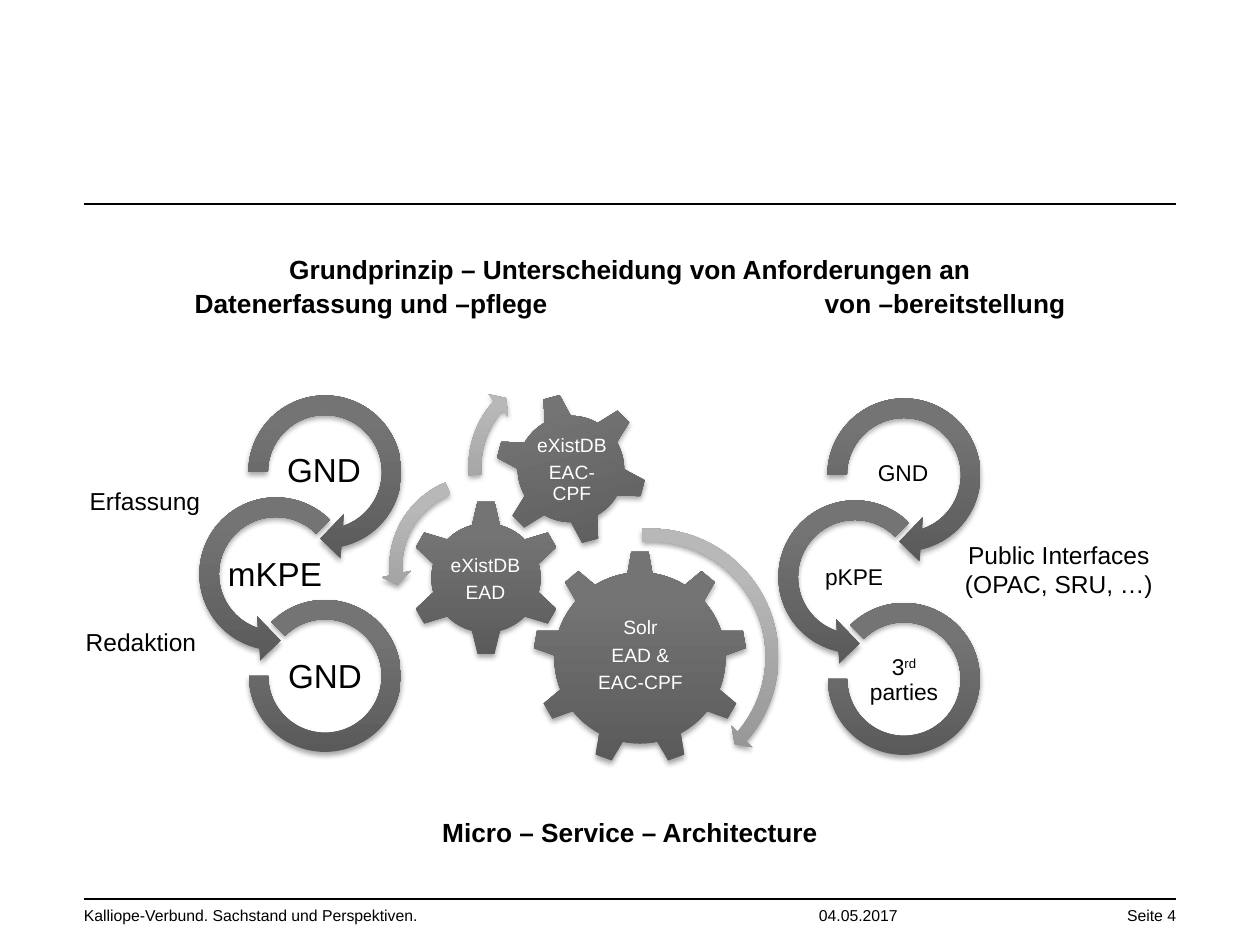
from copy import deepcopy

from lxml import etree
from pptx import Presentation
from pptx.dml.color import RGBColor
from pptx.enum.shapes import MSO_CONNECTOR, MSO_SHAPE
from pptx.enum.text import MSO_ANCHOR, MSO_AUTO_SIZE, PP_ALIGN
from pptx.oxml.ns import qn
from pptx.util import Emu, Pt

PX_PER_INCH = 126
FONT = "Arial"
BLACK = RGBColor(0x00, 0x00, 0x00)
WHITE = RGBColor(0xFF, 0xFF, 0xFF)
DARK_STOPS = [
    (0, RGBColor(0x5A, 0x5A, 0x5A)),
    (0.8, RGBColor(0x74, 0x74, 0x74)),
    (1, RGBColor(0x75, 0x75, 0x75)),
]
LIGHT_STOPS = [
    (0, RGBColor(0x8E, 0x8E, 0x8E)),
    (0.8, RGBColor(0xB8, 0xB8, 0xB8)),
    (1, RGBColor(0xB9, 0xB9, 0xB9)),
]

GEAR_6 = MSO_SHAPE.GEAR_6
GEAR_9 = MSO_SHAPE.GEAR_9
ARROW = MSO_SHAPE.CIRCULAR_ARROW
LEFT_ARROW = MSO_SHAPE.LEFT_CIRCULAR_ARROW
BLOCK_ARC = MSO_SHAPE.BLOCK_ARC
STRAIGHT = MSO_CONNECTOR.STRAIGHT
LEFT, CENTER, RIGHT = PP_ALIGN.LEFT, PP_ALIGN.CENTER, PP_ALIGN.RIGHT
TOP, MIDDLE = MSO_ANCHOR.TOP, MSO_ANCHOR.MIDDLE
GROW = MSO_AUTO_SIZE.SHAPE_TO_FIT_TEXT

SIDE_INSETS = (6, 6, 6, 6)
FOOTER_INSETS = (0, 6, 0, 6)
HEADING_INSETS = (0, 0, 0, 6)
GEAR_INSETS = (2, 2, 2, 2)
CHAIN_INSETS = (1, 1, 1, 1)
HEADING_TABS = [PX_PER_INCH * inch for inch in (3, 4, 5)]


def px(length):
    return Emu(round(length * 914400 / PX_PER_INCH))


def add_rule(slide, y):
    rule = slide.shapes.add_connector(STRAIGHT, px(84), px(y), px(1176), px(y))
    rule.line.color.rgb = BLACK
    rule.line.width = Pt(1)
    etree.SubElement(rule._element.spPr, qn("a:effectLst"))


def add_text(shapes, box, lines, size, insets, align=CENTER, anchor=MIDDLE,
             color=BLACK, bold=False, wrap=True):
    textbox = shapes.add_textbox(*map(px, box))
    frame = textbox.text_frame
    frame.word_wrap = wrap
    frame.vertical_anchor = anchor
    (frame.margin_left, frame.margin_top,
     frame.margin_right, frame.margin_bottom) = map(px, insets)
    frame.text = "\n".join(lines)
    for paragraph, line in zip(frame.paragraphs, lines):
        paragraph.text = ""
        paragraph.alignment = align
        for index, piece in enumerate(line.split("^")):
            run = paragraph.add_run()
            run.text = piece
            run.font.name = FONT
            run.font.size = Pt(size)
            run.font.bold = bold
            run.font.color.rgb = color
            if index % 2:
                run._r.get_or_add_rPr().set("baseline", "30000")
    return frame


def add_heading(slide, box, lines):
    frame = add_text(slide.shapes, box, lines, 15, HEADING_INSETS, bold=True)
    for paragraph in frame.paragraphs[1:]:
        paragraph.space_before = Pt(1.5)
        tabs = etree.SubElement(paragraph._p.get_or_add_pPr(), qn("a:tabLst"))
        for position in HEADING_TABS:
            etree.SubElement(tabs, qn("a:tab"), pos=str(px(position)), algn="l")


def add_diagram_label(shapes, box, lines, size, insets, color):
    frame = add_text(shapes, box, lines, size, insets, color=color)
    for paragraph in frame.paragraphs:
        paragraph.line_spacing = 0.9
        paragraph.space_after = Pt(round(size * 0.35, 1))


def add_side_label(slide, box, lines):
    frame = add_text(slide.shapes, box, lines, 14, SIDE_INSETS, anchor=TOP, wrap=False)
    frame.auto_size = GROW


def add_soft_shadow(shape):
    shape.shadow.inherit = False
    effects = shape._element.spPr.find(qn("a:effectLst"))
    shadow = etree.SubElement(effects, qn("a:outerShdw"), blurRad=str(Pt(3.1)),
                              dist=str(Pt(1.8)), dir="5400000", rotWithShape="0")
    tone = etree.SubElement(shadow, qn("a:srgbClr"), val="000000")
    etree.SubElement(tone, qn("a:alpha"), val="35000")


def add_part(shapes, kind, left, top, size, stops, adjustments=(), rotation=0):
    part = shapes.add_shape(kind, px(left), px(top), px(size), px(size))
    part.rotation = rotation
    for index, value in enumerate(adjustments):
        part.adjustments[index] = value
    part.fill.gradient()
    part.fill.gradient_angle = 90
    stop_list = part._element.spPr.find(qn("a:gradFill")).find(qn("a:gsLst"))
    stop_list.append(deepcopy(stop_list[-1]))
    for stop, (position, color) in zip(part.fill.gradient_stops, stops):
        stop.position = position
        stop.color.rgb = color
    part.line.fill.background()
    add_soft_shadow(part)


def add_gears(slide):
    shapes = slide.shapes.add_group_shape().shapes
    gears = [
        (GEAR_9, 533, 551, 214, 0, (576, 601, 129, 110), ["Solr", "EAD &", "EAC-CPF"]),
        (GEAR_6, 408, 500, 156, 0, (447, 541, 77, 77), ["eXistDB", "EAD"]),
        (GEAR_6, 495, 393, 152, 345, (529, 427, 86, 86), ["eXistDB", "EAC-CPF"]),
    ]
    for kind, left, top, size, rotation, box, lines in gears:
        add_part(shapes, kind, left, top, size, DARK_STOPS, rotation=rotation)
        add_diagram_label(shapes, box, lines, 11, GEAR_INSETS, WHITE)

    turning_arrows = [
        (ARROW, 514, 520, 273, (0.047, 2.99, 24.71, 159.622, 0.055)),
        (LEFT_ARROW, 381, 467, 199, (0.065, 4.3, 104.891, 148.378, 0.075)),
        (ARROW, 460, 360, 214, (0.06, 3.941, 133.138, 105.082, 0.07)),
    ]
    for kind, left, top, size, adjustments in turning_arrows:
        add_part(shapes, kind, left, top, size, LIGHT_STOPS, adjustments)


def add_chain(slide, left, top, labels, size):
    shapes = slide.shapes.add_group_shape().shapes
    links = [
        (ARROW, 0, 0, 178, (0.11, 11.423, 45, 108, 0.125), 39, 64),
        (LEFT_ARROW, -49, 102, 178, (0.11, 11.423, 63, 189, 0.125), -10, 168),
        (BLOCK_ARC, 13, 217, 152, (135, 108, 0.127), 40, 270),
    ]
    for label, (kind, dx, dy, extent, adjustments, label_dx, label_dy) in zip(labels, links):
        add_part(shapes, kind, left + dx, top + dy, extent, DARK_STOPS, adjustments)
        add_diagram_label(shapes, (left + label_dx, top + label_dy, 98, 49),
                          [label], size, CHAIN_INSETS, BLACK)


def add_footer(slide):
    entries = [
        (819, 179, "04.05.2017", LEFT),
        (84, 367, "Kalliope-Verbund. Sachstand und Perspektiven.", LEFT),
        (1056, 120, "Seite 4", RIGHT),
    ]
    for left, width, entry, align in entries:
        add_text(slide.shapes, (left, 900, width, 30), [entry], 9,
                 FOOTER_INSETS, align=align, anchor=TOP)


def main():
    presentation = Presentation()
    presentation.slide_width = px(1260)
    presentation.slide_height = px(945)
    slide = presentation.slides.add_slide(presentation.slide_layouts[6])

    add_rule(slide, 899)
    add_rule(slide, 204)
    add_footer(slide)
    add_gears(slide)
    add_heading(slide, (84, 234, 1092, 110), [
        "Grundprinzip – Unterscheidung von Anforderungen an",
        "Datenerfassung und –pflege \t\t\tvon –bereitstellung",
    ])
    add_chain(slide, 236, 383, ["GND", "mKPE", "GND"], 19)
    add_chain(slide, 815, 386, ["GND", "pKPE", "3^rd^ parties"], 13)
    add_side_label(slide, (77, 480, 136, 43), ["Erfassung"])
    add_side_label(slide, (73, 621, 136, 43), ["Redaktion"])
    add_heading(slide, (84, 780, 1092, 110), ["Micro – Service – Architecture"])
    add_side_label(slide, (952, 534, 214, 72), ["Public Interfaces", "(OPAC, SRU, …)"])

    presentation.save("out.pptx")


if __name__ == "__main__":
    main()
